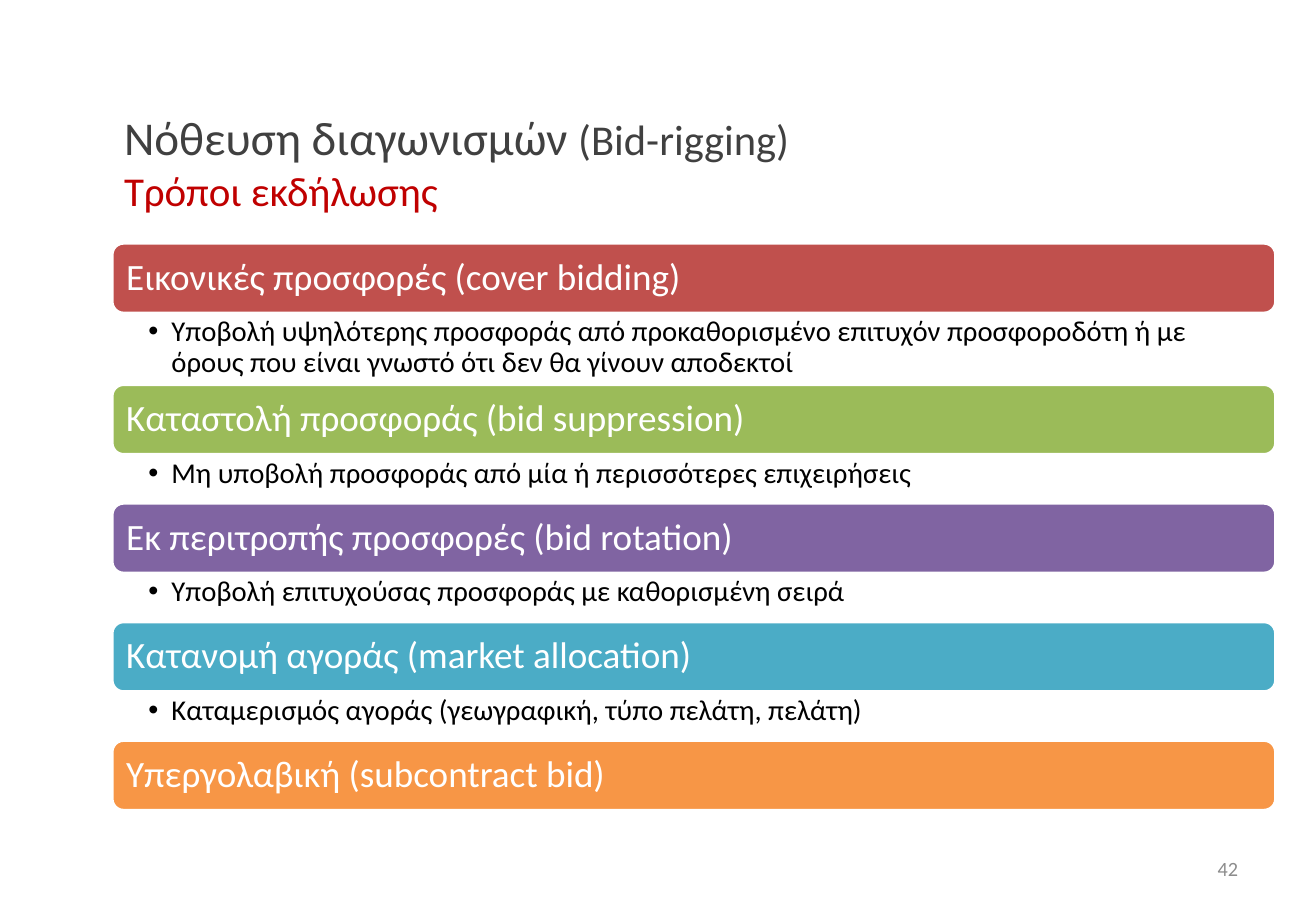
"""Build the slide on forms of bid-rigging."""
from dataclasses import dataclass

from lxml.etree import SubElement
from pptx import Presentation
from pptx.dml.color import RGBColor
from pptx.enum.shapes import MSO_SHAPE
from pptx.enum.text import MSO_ANCHOR, MSO_AUTO_SIZE, PP_ALIGN
from pptx.oxml.ns import qn
from pptx.util import Inches, Pt

WIDE, HIGH = Inches(10.83), Inches(7.5)
LEFT, SPAN = 8.5, 88.45
TOP, BAR = 26.67, 7.72
FONT = "Calibri"


@dataclass
class Run:
    """A stretch of text in one size and colour."""
    text: str
    size: float
    tint: str


@dataclass
class Form:
    """A coloured bar and the list below it, its height in percent."""
    head: str
    fill: str
    note: str = ""
    room: float = 5.3


FORMS = [
    Form("Εικονικές προσφορές (cover bidding)", "C0504D",
         "Υποβολή υψηλότερης προσφοράς από προκαθορισμένο επιτυχόν προσφοροδότη ή με "
         "όρους που είναι γνωστό ότι δεν θα γίνουν αποδεκτοί", 7.8),
    Form("Καταστολή προσφοράς (bid suppression)", "9BBB59",
         "Μη υποβολή προσφοράς από μία ή περισσότερες επιχειρήσεις"),
    Form("Εκ περιτροπής προσφορές (bid rotation)", "8064A2",
         "Υποβολή επιτυχούσας προσφοράς με καθορισμένη σειρά"),
    Form("Κατανομή αγοράς (market allocation)", "4BACC6",
         "Καταμερισμός αγοράς (γεωγραφική, τύπο πελάτη, πελάτη)"),
    Form("Υπεργολαβική (subcontract bid)", "F79646"),
]
TITLE = [
    [Run("Νόθευση διαγωνισμών ", 27.9, "404040"), Run("(Bid-rigging)", 25.2, "404040")],
    [Run("Τρόποι εκδήλωσης", 24.3, "C00000")],
]


def paint(part, tint: str) -> None:
    """Give a fill or a font a solid hex colour."""
    if hasattr(part, "solid"):
        part.solid()
        part.fore_color.rgb = RGBColor.from_string(tint)
    else:
        part.color.rgb = RGBColor.from_string(tint)


def area(left: float, top: float, wide: float, high: float) -> tuple[int, int, int, int]:
    """Turn percent shares of the slide into a place and a size."""
    return (int(WIDE * left / 100), int(HIGH * top / 100),
            int(WIDE * wide / 100), int(HIGH * high / 100))


def move(shape, spot: tuple[int, int, int, int]) -> None:
    """Put a placeholder in its place."""
    shape.left, shape.top, shape.width, shape.height = spot


def write(shape, lines: list[list[Run]], anchor=MSO_ANCHOR.MIDDLE, align=PP_ALIGN.LEFT,
          pads: tuple[float, float, float, float] = (0.1, 0.05, 0.1, 0.05),
          pitch: float = 1.0) -> None:
    """Fill a shape with one paragraph, run by run."""
    frame = shape.text_frame
    frame.word_wrap = True
    frame.auto_size = MSO_AUTO_SIZE.NONE
    frame.vertical_anchor = anchor
    (frame.margin_left, frame.margin_top,
     frame.margin_right, frame.margin_bottom) = map(Inches, pads)
    para = frame.paragraphs[0]
    para.alignment, para.line_spacing = align, pitch
    para.space_before = para.space_after = Pt(0)
    for count, line in enumerate(lines):
        if count:
            para.add_line_break()
        for item in line:
            run = para.add_run()
            run.text = item.text
            run.font.name, run.font.size, run.font.bold = FONT, Pt(item.size), False
            paint(run.font, item.tint)


def dot(shape) -> None:
    """Give the paragraph of a shape a hanging bullet."""
    props = shape.text_frame.paragraphs[0]._p.get_or_add_pPr()
    props.set("marL", str(Inches(0.19)))
    props.set("indent", str(-Inches(0.19)))
    SubElement(props, qn("a:buFont")).set("typeface", "Arial")
    SubElement(props, qn("a:buChar")).set("char", "•")


def draw_bar(slide, form: Form, top: float) -> None:
    """Draw the rounded bar of a form."""
    bar = slide.shapes.add_shape(MSO_SHAPE.ROUNDED_RECTANGLE, *area(LEFT, top, SPAN, BAR))
    bar.shadow.inherit = False
    paint(bar.fill, form.fill)
    paint(bar.line.fill, "FFFFFF")
    bar.line.width = Pt(2)
    write(bar, [[Run(form.head, 22, "FFFFFF")]], pads=(0.09, 0.09, 0.09, 0.09), pitch=0.9)


def draw_list(body, form: Form, top: float) -> None:
    """Set the bulleted note of a form."""
    move(body, area(LEFT, top, SPAN, form.room))
    dot(body)
    write(body, [[Run(form.note, 17, "000000")]], MSO_ANCHOR.TOP,
          pads=(0.3, 0.03, 0.17, 0.03), pitch=0.9)


def main() -> None:
    """Build and save the deck."""
    deck = Presentation()
    deck.slide_width, deck.slide_height = WIDE, HIGH
    slide = deck.slides.add_slide(deck.slide_layouts.get_by_name("Comparison"))
    title, *slots = slide.placeholders
    move(title, area(LEFT, 11.33, SPAN, 12.8))
    write(title, TITLE)

    top = TOP
    for form in FORMS:
        draw_bar(slide, form, top)
        if form.note:
            draw_list(slots.pop(0), form, top + BAR)
        top += BAR + form.room

    page = slide.shapes.add_textbox(*area(71.65, 92.67, 23.35, 5.33))
    write(page, [[Run("42", 12, "8C8C8C")]], align=PP_ALIGN.RIGHT)
    deck.save("out.pptx")


if __name__ == "__main__":
    main()
